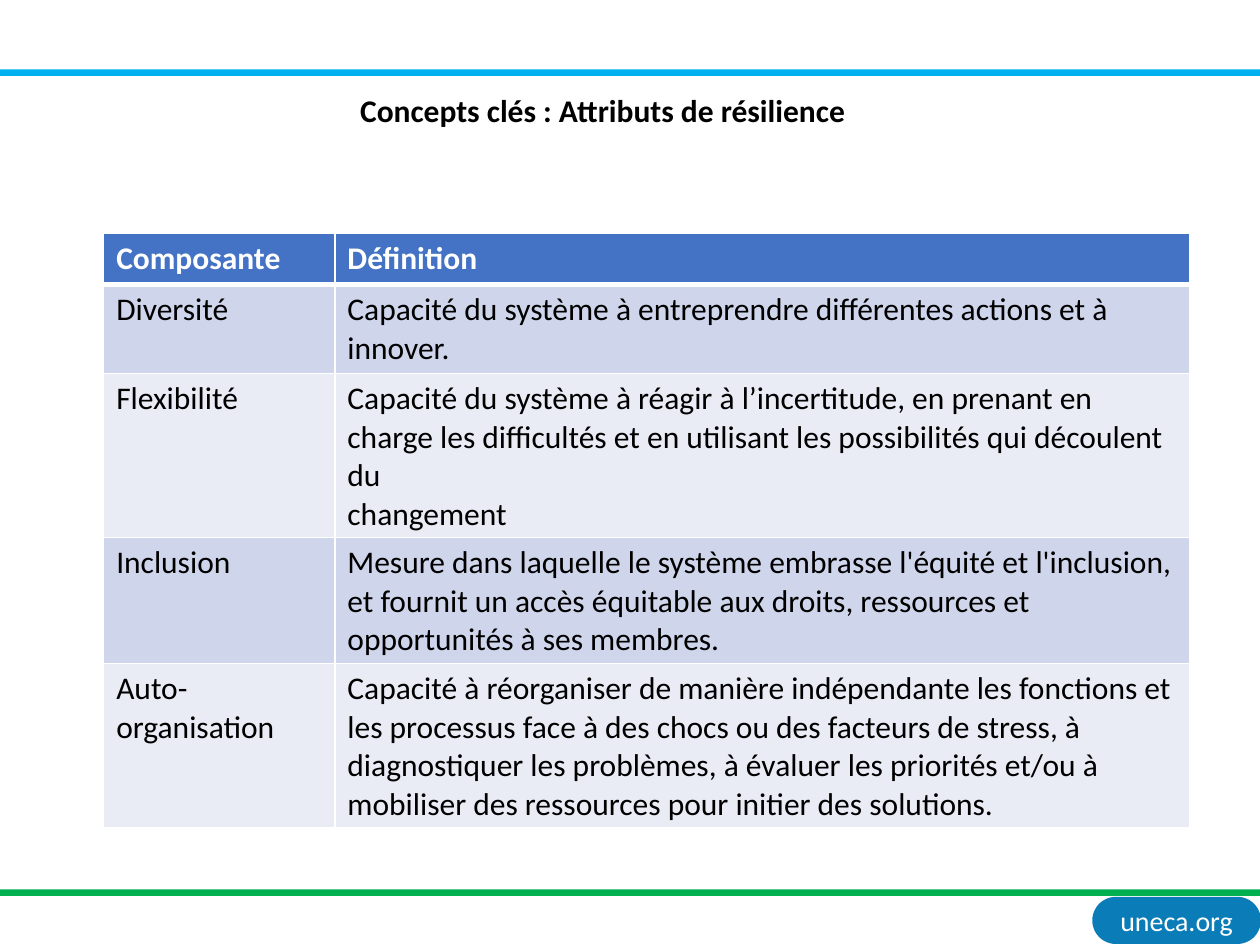
from dataclasses import dataclass

from lxml.etree import SubElement
from pptx import Presentation
from pptx.dml.color import RGBColor
from pptx.enum.shapes import MSO_SHAPE
from pptx.enum.text import MSO_ANCHOR, PP_ALIGN
from pptx.oxml.ns import qn
from pptx.util import Cm, Pt


@dataclass(frozen=True)
class Theme:
    font: str = "Calibri"
    body_size: int = 18
    badge_size: int = 16
    black: str = "000000"
    white: str = "FFFFFF"
    badge: str = "0A7CB8"
    top_band: str = "00B0F0"
    bottom_band: str = "00B050"
    header: str = "4472C4"
    stripes: tuple[str, str] = ("CFD5EA", "E9EBF5")


@dataclass(frozen=True)
class Box:
    """Position and size in centimetres."""
    left: float
    top: float
    width: float
    height: float

    def lengths(self) -> tuple[Cm, Cm, Cm, Cm]:
        return Cm(self.left), Cm(self.top), Cm(self.width), Cm(self.height)


@dataclass(frozen=True)
class Attribute:
    name: str
    definition: str
    row_height: float


THEME = Theme()
SLIDE_WIDTH, SLIDE_HEIGHT = 25.4, 19.05
COLUMN_WIDTHS = (4.66, 17.23)
TABLE_LEFT, TABLE_TOP = 2.09, 4.7
THIN_BORDER, HEADER_BORDER = 1, 3

ROWS = (
    Attribute("Composante", "Définition", 1.03),
    Attribute("Diversité",
              "Capacité du système à entreprendre différentes actions et à innover.", 1.8),
    Attribute("Flexibilité",
              "Capacité du système à réagir à l’incertitude, en prenant en charge les "
              "difficultés et en utilisant les possibilités qui découlent du\nchangement", 3.3),
    Attribute("Inclusion",
              "Mesure dans laquelle le système embrasse l'équité et l'inclusion, et fournit "
              "un accès équitable aux droits, ressources et opportunités à ses membres.", 2.53),
    Attribute("Auto-organisation",
              "Capacité à réorganiser de manière indépendante les fonctions et les processus "
              "face à des chocs ou des facteurs de stress, à diagnostiquer les problèmes, à "
              "évaluer les priorités et/ou à mobiliser des ressources pour initier des "
              "solutions.", 3.3),
)


def write_text(text_frame, text: str, color: str, size: int = THEME.body_size,
               bold: bool = False, alignment=PP_ALIGN.LEFT) -> None:
    font_format = {"name": THEME.font, "size": Pt(size), "bold": bold}
    text_frame.text = text
    for paragraph in text_frame.paragraphs:
        paragraph.alignment = alignment
        for run in paragraph.runs:
            for attribute, value in font_format.items():
                setattr(run.font, attribute, value)
            run.font.color.rgb = RGBColor.from_string(color)


def add_filled_shape(slide, kind, box: Box, color: str):
    shape = slide.shapes.add_shape(kind, *box.lengths())
    shape.shadow.inherit = False
    shape.fill.solid()
    shape.fill.fore_color.rgb = RGBColor.from_string(color)
    shape.line.fill.background()
    return shape


def add_badge(slide) -> None:
    badge = add_filled_shape(slide, MSO_SHAPE.ROUNDED_RECTANGLE,
                             Box(22.02, 18.08, 3.4, 0.95), THEME.badge)
    badge.adjustments[0] = 0.5
    frame_format = {"margin_left": Cm(0.13), "margin_right": Cm(0.13),
                    "margin_top": Cm(0.13), "margin_bottom": Cm(0.13),
                    "vertical_anchor": MSO_ANCHOR.MIDDLE, "word_wrap": False}
    for attribute, value in frame_format.items():
        setattr(badge.text_frame, attribute, value)
    write_text(badge.text_frame, "uneca.org", THEME.white, THEME.badge_size,
               alignment=PP_ALIGN.CENTER)


def add_title(slide) -> None:
    title = slide.shapes.add_textbox(*Box(7.01, 1.71, 10.39, 1.03).lengths())
    title.text_frame.word_wrap = False
    write_text(title.text_frame, "Concepts clés\u00a0: Attributs de résilience".replace("\u00a0", " "),
               THEME.black, bold=True)


def set_borders(cell, top: float, bottom: float) -> None:
    """Draw white cell borders; the side borders are always thin."""
    properties = cell._tc.get_or_add_tcPr()
    widths = {"a:lnL": THIN_BORDER, "a:lnR": THIN_BORDER, "a:lnT": top, "a:lnB": bottom}
    for position, (tag, width) in enumerate(widths.items()):
        line = SubElement(properties, qn(tag), w=str(Pt(width)))
        fill = SubElement(line, qn("a:solidFill"))
        SubElement(fill, qn("a:srgbClr"), val=THEME.white)
        properties.insert(position, line)


def add_attribute_table(slide) -> None:
    box = Box(TABLE_LEFT, TABLE_TOP, sum(COLUMN_WIDTHS), sum(row.row_height for row in ROWS))
    table = slide.shapes.add_table(len(ROWS), len(COLUMN_WIDTHS), *box.lengths()).table
    for column, width in zip(table.columns, COLUMN_WIDTHS):
        column.width = Cm(width)
    for index, row in enumerate(ROWS):
        is_header = index == 0
        table.rows[index].height = Cm(row.row_height)
        fill = THEME.header if is_header else THEME.stripes[(index - 1) % 2]
        color = THEME.white if is_header else THEME.black
        top = HEADER_BORDER if index == 1 else THIN_BORDER
        bottom = HEADER_BORDER if is_header else THIN_BORDER
        for cell, text in zip(table.rows[index].cells, (row.name, row.definition)):
            cell.fill.solid()
            cell.fill.fore_color.rgb = RGBColor.from_string(fill)
            set_borders(cell, top, bottom)
            write_text(cell.text_frame, text, color, bold=is_header)


def main() -> None:
    presentation = Presentation()
    presentation.slide_width, presentation.slide_height = Cm(SLIDE_WIDTH), Cm(SLIDE_HEIGHT)
    slide = presentation.slides.add_slide(presentation.slide_layouts[6])
    add_badge(slide)
    for top, color in ((1.4, THEME.top_band), (17.93, THEME.bottom_band)):
        add_filled_shape(slide, MSO_SHAPE.RECTANGLE, Box(0, top, SLIDE_WIDTH, 0.13), color)
    add_title(slide)
    add_attribute_table(slide)
    presentation.save("out.pptx")


if __name__ == "__main__":
    main()
